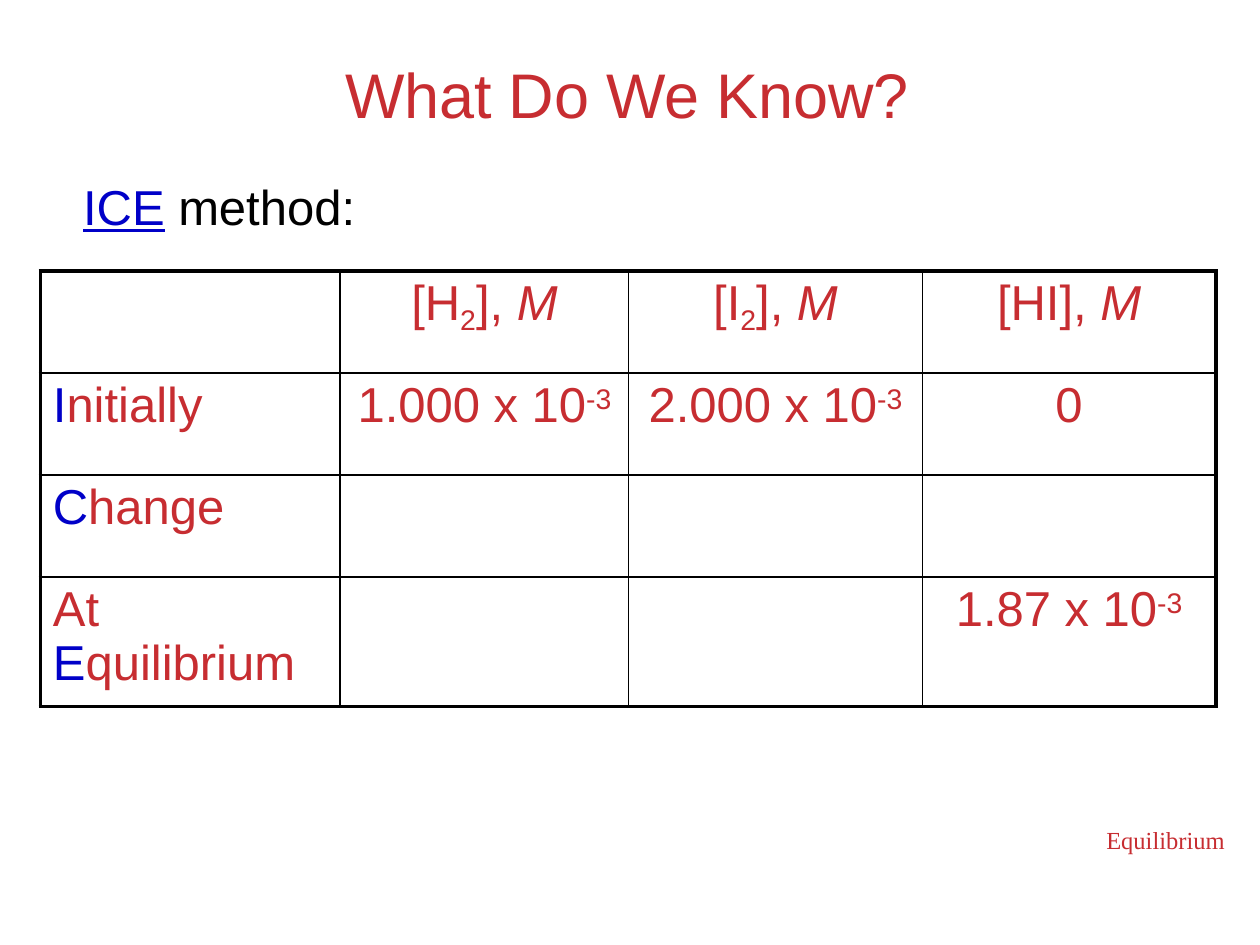
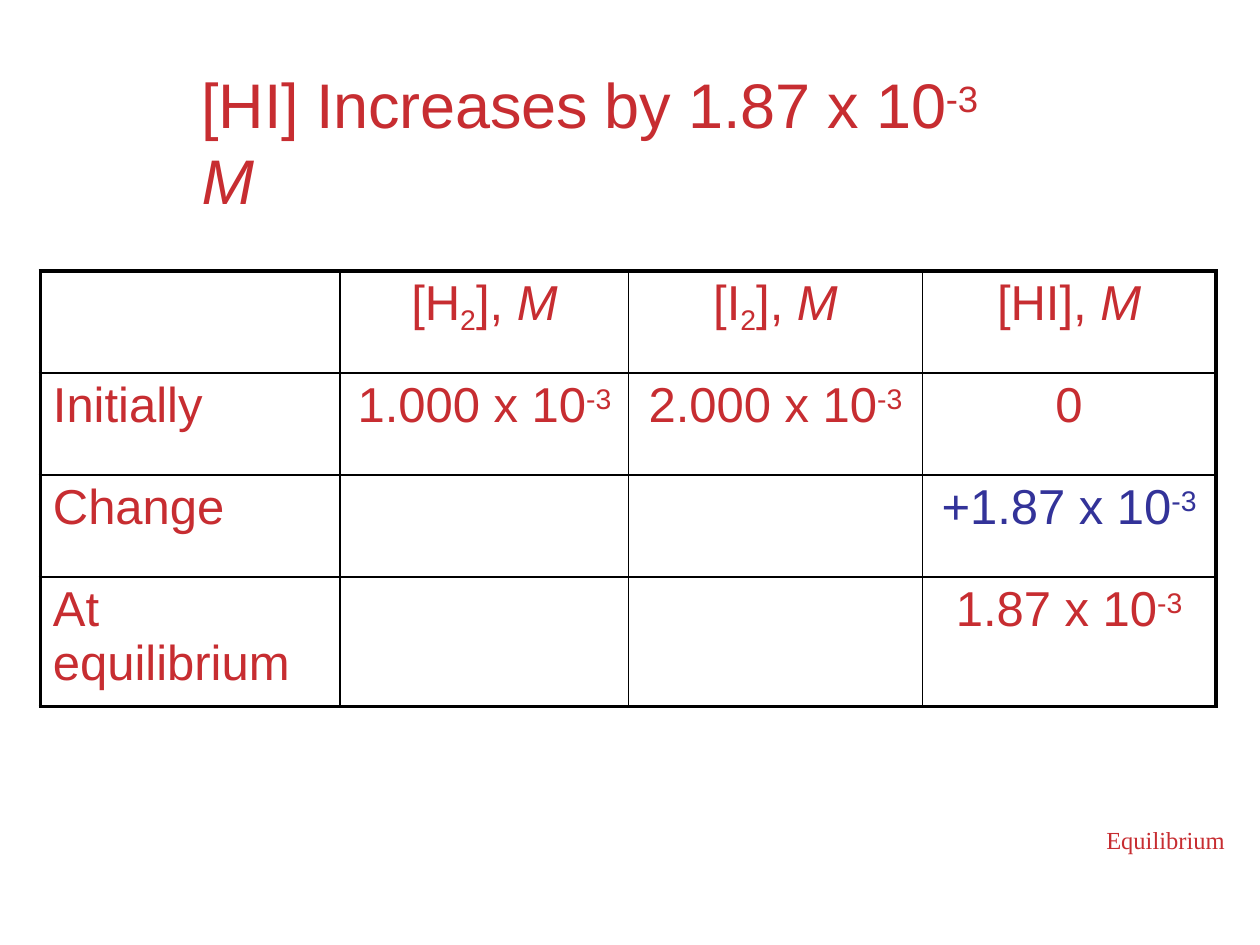
import lxml.etree
import pptx
import pptx.dml.color
import pptx.enum.text
import pptx.oxml.ns
import pptx.util

PX = 9144  # EMU per px, 100 px to the inch
COLORS = {"red": "C72D31", "blue": "0000C8", "indigo": "333399", "black": "000000"}
FORMATS = {
    "title": {"name": "Arial", "size": pptx.util.Pt(36)},
    "text": {"name": "Arial", "size": pptx.util.Pt(28)},
    "footer": {"name": "Times New Roman", "size": pptx.util.Pt(14)},
}
STYLES = {
    "plain": {}, "italic": {"italic": True}, "underline": {"underline": True},
    "sub": {"baseline": -20}, "sup": {"baseline": 26},
}
ALIGN = pptx.enum.text.PP_ALIGN


def write(para, spans, base):
    """Add spans given as (text, style, colour); style and colour are optional."""
    for text, style, color in [(*span, "plain", "red")[:3] if len(span) == 1
                               else (*span, "red")[:3] for span in spans]:
        span = para.add_run()
        span.text = text
        span.font.color.rgb = pptx.dml.color.RGBColor.from_string(COLORS[color])
        for name, value in {**FORMATS[base], **STYLES[style]}.items():
            if name == "baseline":
                span.font._element.set("baseline", str(value * 1000))
            else:
                setattr(span.font, name, value)
        if base == "title":
            span.font._element.set("spc", "-10")


def set_frame(box, place, top_inset):
    """Place a text box and return its first paragraph."""
    for name, value in zip(("left", "top", "width", "height"), place):
        setattr(box, name, value * PX)
    frame = box.text_frame
    margins = {"margin_left": 0, "margin_right": 0, "margin_bottom": 0,
               "margin_top": top_inset * PX}
    for name, value in {**margins, "word_wrap": True,
                        "auto_size": pptx.enum.text.MSO_AUTO_SIZE.NONE,
                        "vertical_anchor": pptx.enum.text.MSO_ANCHOR.TOP}.items():
        setattr(frame, name, value)
    para = frame.paragraphs[0]
    para.alignment = ALIGN.LEFT
    return para


# Table layout and the rows that both slides show
TABLE_PLACE = (32, 215, 933, 346)
COLUMN_WIDTHS = (238, 229, 233, 233)
ROW_HEIGHTS = (81, 81, 81, 103)
THIN, THICK = 1, 2.25
HEADER = [
    [],
    [("[H",), ("2", "sub"), ("], ",), ("M", "italic")],
    [("[I",), ("2", "sub"), ("], ",), ("M", "italic")],
    [("[HI], ",), ("M", "italic")],
]
INITIAL = [[(f"{value} x 10",), ("-3", "sup")] for value in ("1.000", "2.000")] + [[("0",)]]
FINAL = [[], [], [("1.87 x 10",), ("-3", "sup")]]

SLIDES = [
    {
        "title": [("What Do We Know?",)],
        "title_place": (274, 38, 452, 63),
        "intro": [("ICE", "underline", "blue"), (" method:", "plain", "black")],
        "labels": [
            [("I", "plain", "blue"), ("nitially",)],
            [("C", "plain", "blue"), ("hange",)],
            [("At ",), ("E", "plain", "blue"), ("quilibrium",)],
        ],
        "change": [[], [], []],
    },
    {
        "title": [("[HI] Increases by 1.87 x 10",), ("-3\t", "sup"), ("M", "italic")],
        "title_place": (156, 46, 688, 63),
        "title_indent": 4,
        "title_tab": 642,
        "labels": [[("Initially",)], [("Change",)], [("At equilibrium",)]],
        "change": [[], [], [("+1.87 x 10", "plain", "indigo"), ("-3", "sup", "indigo")]],
    },
]

deck = pptx.Presentation()
deck.slide_width, deck.slide_height = 1000 * PX, 750 * PX

for content in SLIDES:
    page = deck.slides.add_slide(deck.slide_layouts[5])

    # Title
    para = set_frame(page.shapes.title, content["title_place"], 6)
    if "title_tab" in content:
        properties = para._p.get_or_add_pPr()
        properties.set("marL", str(content["title_indent"] * PX))
        properties.set("indent", "0")
        tabs = lxml.etree.SubElement(properties, pptx.oxml.ns.qn("a:tabLst"))
        lxml.etree.SubElement(tabs, pptx.oxml.ns.qn("a:tab"),
                              pos=str(content["title_tab"] * PX), algn="l")
    write(para, content["title"], "title")

    # Footer
    box = page.shapes.add_textbox(0, 0, 0, 0)
    para = set_frame(box, (878, 655, 95, 24), 1)
    para.line_spacing = pptx.util.Pt(16.2)
    write(para, [("Equilibrium",)], "footer")

    # Concentration table
    table = page.shapes.add_table(4, 4, *(length * PX for length in TABLE_PLACE)).table
    table.first_row = table.horz_banding = False
    for column, width in zip(table.columns, COLUMN_WIDTHS):
        column.width = width * PX
    for row, height in zip(table.rows, ROW_HEIGHTS):
        row.height = height * PX

    labels = content["labels"]
    rows = [HEADER] + [[label, *values] for label, values
                       in zip(labels, (INITIAL, content["change"], FINAL))]
    for r, row in enumerate(rows):
        for c, spans in enumerate(row):
            cell = table.cell(r, c)
            side = 10 * PX if c == 0 else 0
            for name, value in {"margin_left": side, "margin_right": side,
                                "margin_top": 4 * PX, "margin_bottom": 0}.items():
                setattr(cell, name, value)
            para = cell.text_frame.paragraphs[0]
            para.alignment = ALIGN.CENTER if c else ALIGN.LEFT
            write(para, spans, "text")

            # Thick outer frame, thin inner rules
            outer = {"L": c == 0, "R": c == 3, "T": r == 0, "B": r == 3}
            for edge, is_outer in outer.items():
                width = pptx.util.Pt(THICK if is_outer else THIN)
                line = lxml.etree.SubElement(cell._tc.get_or_add_tcPr(),
                                             pptx.oxml.ns.qn(f"a:ln{edge}"), w=str(int(width)))
                fill = lxml.etree.SubElement(line, pptx.oxml.ns.qn("a:solidFill"))
                lxml.etree.SubElement(fill, pptx.oxml.ns.qn("a:srgbClr"), val=COLORS["black"])
            cell.fill.background()

    # Method line above the table
    if "intro" in content:
        box = page.shapes.add_textbox(0, 0, 0, 0)
        write(set_frame(box, (66, 134, 219, 50), 6), content["intro"], "text")

deck.save("out.pptx")
